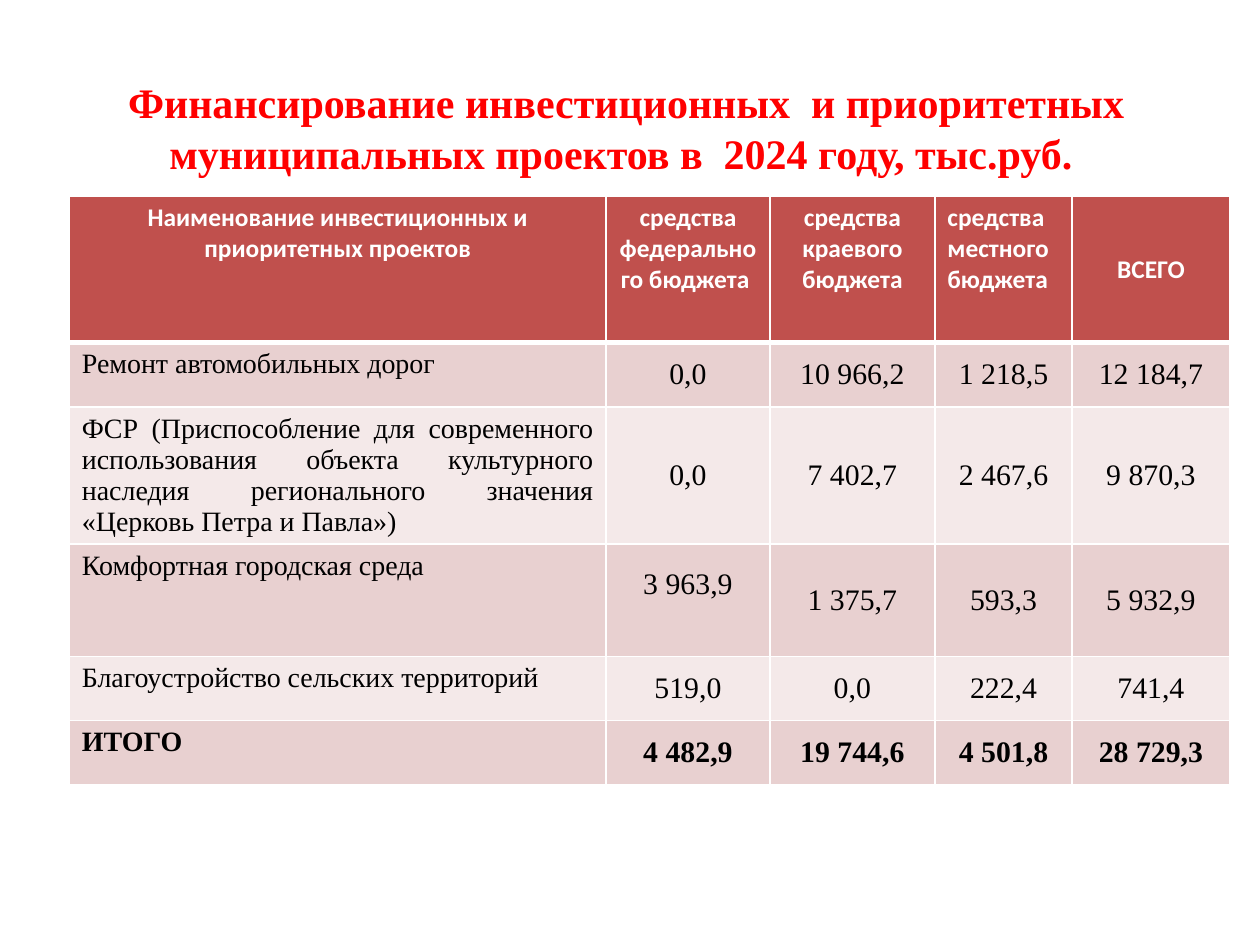
from lxml.etree import SubElement
from pptx import Presentation
from pptx.dml.color import RGBColor
from pptx.enum.text import MSO_ANCHOR as Anchor, PP_ALIGN as Align
from pptx.oxml.ns import qn
from pptx.util import Inches, Pt

SERIF = "Times New Roman"
WHITE = "FFFFFF"
HEADER_FILL = "C0504D"
BAND_FILLS = ["E8D0D0", "F4E9E9"]
COLUMN_WIDTHS = [4.26, 1.3, 1.31, 1.09, 1.25]
ROW_HEIGHTS = [1.16, 0.51, 1.09, 0.89, 0.51, 0.51]
TITLE = "Финансирование инвестиционных  и приоритетных муниципальных проектов в  2024 году, тыс.руб. "
HEADINGS = [
    "Наименование инвестиционных и приоритетных проектов",
    "средства федерального бюджета ",
    "средства краевого бюджета",
    "средства местного бюджета",
    "ВСЕГО",
]
PROJECTS = [
    ["Ремонт автомобильных дорог", "0,0", "10 966,2", "1 218,5", "12 184,7"],
    ["ФСР (Приспособление для современного использования объекта культурного "
     "наследия регионального значения «Церковь Петра и Павла»)",
     "0,0", "7 402,7", "2 467,6", "9 870,3"],
    ["Комфортная городская среда", "3 963,9", "1 375,7", "593,3", "5 932,9"],
    ["Благоустройство сельских территорий", "519,0", "0,0", "222,4", "741,4"],
    ["ИТОГО", "4 482,9", "19 744,6", "4 501,8", "28 729,3"],
]


def color(value):
    return RGBColor.from_string(value)


def write(frame, text, *, size, font=SERIF, fill="000000", bold=False, align=Align.CENTER):
    para = frame.paragraphs[0]
    para.alignment = align
    span = para.add_run()
    span.text = text
    span.font.name = font
    span.font.size = Pt(size)
    span.font.bold = bold
    span.font.color.rgb = color(fill)


def style_cell(cell, fill, top=1, bottom=1):
    properties = cell._tc.get_or_add_tcPr()
    for side, width in (("L", 1), ("R", 1), ("T", top), ("B", bottom)):
        line = SubElement(properties, qn(f"a:ln{side}"), w=str(Pt(width)))
        solid = SubElement(line, qn("a:solidFill"))
        SubElement(solid, qn("a:srgbClr"), val=WHITE)
    cell.fill.solid()
    cell.fill.fore_color.rgb = color(fill)


def add_title(page):
    box = page.shapes.add_textbox(Inches(0.47), Inches(0.55), Inches(9), Inches(0.86))
    frame = box.text_frame
    frame.word_wrap = True
    frame.vertical_anchor = Anchor.BOTTOM
    frame.margin_left = frame.margin_right = frame.margin_bottom = 0
    frame.margin_top = Inches(0.05)
    write(frame, TITLE, size=24, fill="FF0000", bold=True)


def fill_header(table):
    for column, heading in enumerate(HEADINGS):
        cell = table.cell(0, column)
        style_cell(cell, HEADER_FILL, bottom=3)
        align = Align.LEFT if column == 3 else Align.CENTER
        write(cell.text_frame, heading, size=14.5, font="Calibri", fill=WHITE, bold=True, align=align)
    table.cell(0, len(HEADINGS) - 1).vertical_anchor = Anchor.MIDDLE


def fill_projects(table):
    for row, project in enumerate(PROJECTS, 1):
        total = row == len(PROJECTS)
        for column, text in enumerate(project):
            cell = table.cell(row, column)
            style_cell(cell, BAND_FILLS[(row - 1) % 2], top=3 if row == 1 else 1)
            if column == 0:
                align = Align.LEFT if row == 3 else Align.JUSTIFY
                write(cell.text_frame, text, size=16, bold=total, align=align)
            else:
                cell.vertical_anchor = Anchor.MIDDLE
                write(cell.text_frame, text, size=17, bold=total)
    table.cell(3, 1).margin_bottom = Inches(0.3)


def add_budget_table(page):
    graphic = page.shapes.add_table(
        len(ROW_HEIGHTS), len(COLUMN_WIDTHS), Inches(0.55), Inches(1.56),
        Inches(sum(COLUMN_WIDTHS)), Inches(sum(ROW_HEIGHTS)))
    table = graphic.table
    for column, width in zip(table.columns, COLUMN_WIDTHS):
        column.width = Inches(width)
    for row, height in zip(table.rows, ROW_HEIGHTS):
        row.height = Inches(height)
    fill_header(table)
    fill_projects(table)


def main():
    deck = Presentation()
    deck.slide_width = Inches(10)
    deck.slide_height = Inches(7.5)
    page = deck.slides.add_slide(deck.slide_layouts[6])
    add_budget_table(page)
    add_title(page)
    deck.save("out.pptx")


if __name__ == "__main__":
    main()
